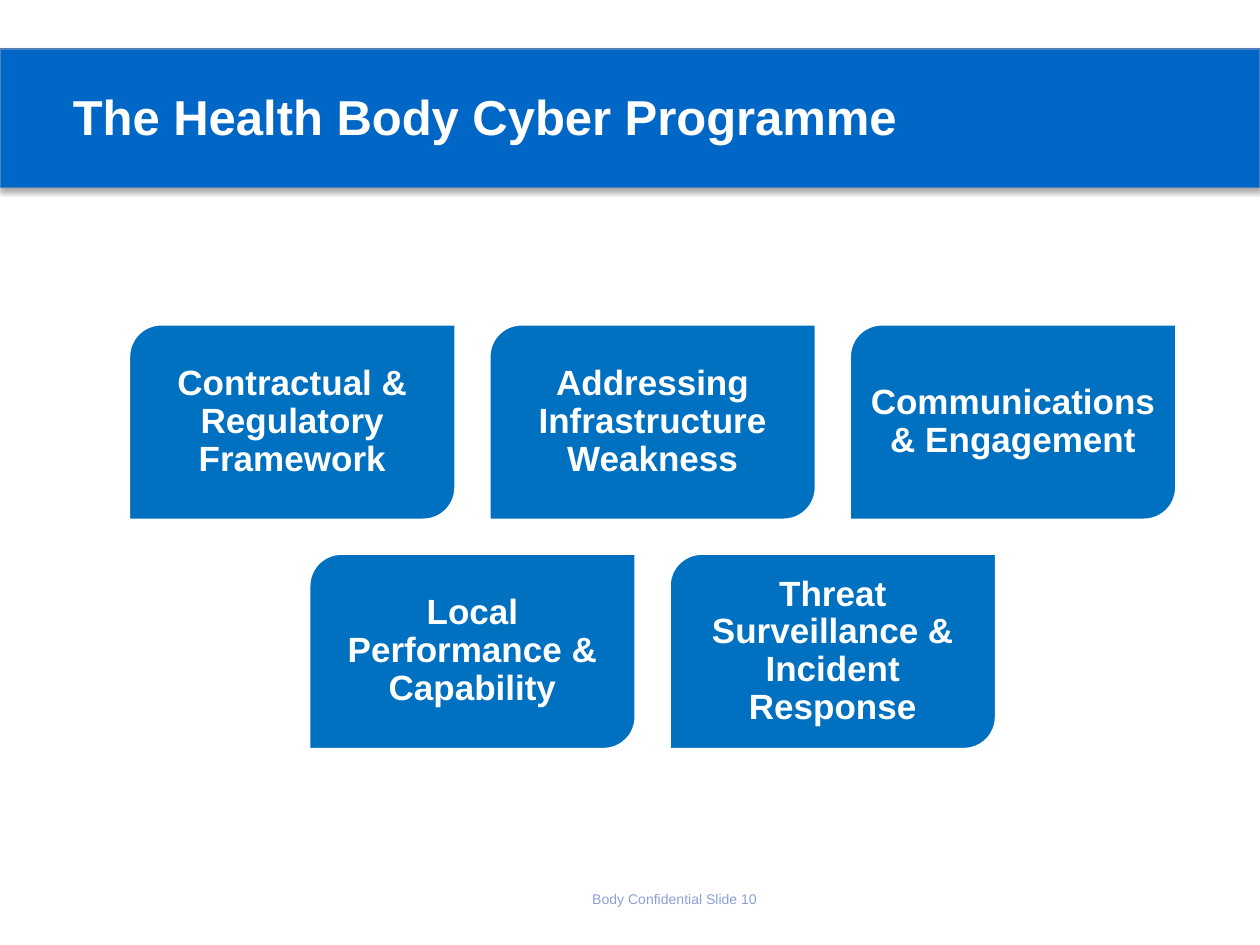
from dataclasses import dataclass

from lxml import etree
from pptx import Presentation
from pptx.dml.color import RGBColor
from pptx.enum.shapes import MSO_SHAPE
from pptx.enum.text import MSO_ANCHOR, PP_ALIGN
from pptx.oxml.ns import qn
from pptx.util import Inches, Pt

RECT = MSO_SHAPE.RECTANGLE
CARD = MSO_SHAPE.ROUND_2_DIAG_RECTANGLE
MIDDLE = MSO_ANCHOR.MIDDLE
TOP = MSO_ANCHOR.TOP
LEFT = PP_ALIGN.LEFT
CENTER = PP_ALIGN.CENTER


@dataclass(frozen=True)
class Theme:
    """Colours, font and type sizes of the slide."""
    white: str = "FFFFFF"
    band: str = "0067C6"
    edge: str = "4F81BD"
    card: str = "0070C0"
    note: str = "8CA0D6"
    shade: str = "000000"
    font: str = "Arial"
    head: int = 28
    body: int = 20
    foot: int = 8


@dataclass(frozen=True)
class Grid:
    """Card sizes and pitches in inches."""
    left: float = 1.02
    top: float = 2.57
    wide: float = 2.6
    high: float = 1.56
    step: float = 2.86
    drop: float = 1.82
    cols: int = 3


THEME = Theme()
GRID = Grid()
ROWS = [
    ["Contractual & Regulatory Framework",
     "Addressing Infrastructure Weakness",
     "Communications & Engagement"],
    ["Local Performance & Capability",
     "Threat Surveillance & Incident Response"],
]


def write(shape, text, size, color, bold=False, align=LEFT, anchor=MIDDLE):
    """Put one styled paragraph in a shape and return it."""
    frame = shape.text_frame
    frame.word_wrap = True
    frame.vertical_anchor = anchor
    para = frame.paragraphs[0]
    para.text = text
    para.alignment = align
    para.font.name = THEME.font
    para.font.size = Pt(size)
    para.font.bold = bold
    para.font.color.rgb = RGBColor.from_string(color)
    return para


def add_form(slide, kind, box, fill, line, width):
    """Add a filled and outlined preset shape."""
    shape = slide.shapes.add_shape(kind, *map(Inches, box))
    shape.shadow.inherit = False
    shape.fill.solid()
    shape.fill.fore_color.rgb = RGBColor.from_string(fill)
    shape.line.color.rgb = RGBColor.from_string(line)
    shape.line.width = Pt(width)
    return shape


def add_shade(shape):
    """Give a shape a soft shadow that falls straight down."""
    effects = shape._element.spPr.find(qn("a:effectLst"))
    outer = etree.SubElement(
        effects, qn("a:outerShdw"), blurRad=str(Pt(3.1)), dist=str(Pt(1.8)),
        dir="5400000", rotWithShape="0")
    color = etree.SubElement(outer, qn("a:srgbClr"), val=THEME.shade)
    etree.SubElement(color, qn("a:alpha"), val="35000")


def add_text(slide, box, text, size, color, **style):
    """Add a text box with one styled paragraph."""
    shape = slide.shapes.add_textbox(*map(Inches, box))
    write(shape, text, size, color, **style)


def add_card(slide, col, row, text):
    """Add one labelled card at a grid place."""
    box = (GRID.left + col * GRID.step, GRID.top + row * GRID.drop,
           GRID.wide, GRID.high)
    shape = add_form(slide, CARD, box, THEME.card, THEME.white, 2)
    frame = shape.text_frame
    frame.margin_left = frame.margin_right = Inches(0.08)
    frame.margin_top = frame.margin_bottom = Inches(0.08)
    para = write(shape, text, THEME.body, THEME.white, bold=True, align=CENTER)
    para.line_spacing = 0.9


def add_cards(slide):
    """Lay out the rows of cards, each centred on the grid."""
    for row, labels in enumerate(ROWS):
        start = (GRID.cols - len(labels)) / 2
        for col, text in enumerate(labels):
            add_card(slide, start + col, row, text)


def main():
    """Build and save the slide."""
    deck = Presentation()
    deck.slide_width, deck.slide_height = Inches(10), Inches(7.5)
    slide = deck.slides.add_slide(deck.slide_layouts[6])
    band = add_form(slide, RECT, (0, 0.39, 10, 1.1),
                    THEME.band, THEME.edge, 0.75)
    add_shade(band)
    add_text(slide, (0.48, 0.48, 7.35, 0.88), "The Health Body Cyber Programme",
             THEME.head, THEME.white, bold=True)
    add_text(slide, (4.57, 7.02, 1.57, 0.4), "Body Confidential Slide 10",
             THEME.foot, THEME.note, align=CENTER, anchor=TOP)
    add_cards(slide)
    deck.save("out.pptx")


if __name__ == "__main__":
    main()
